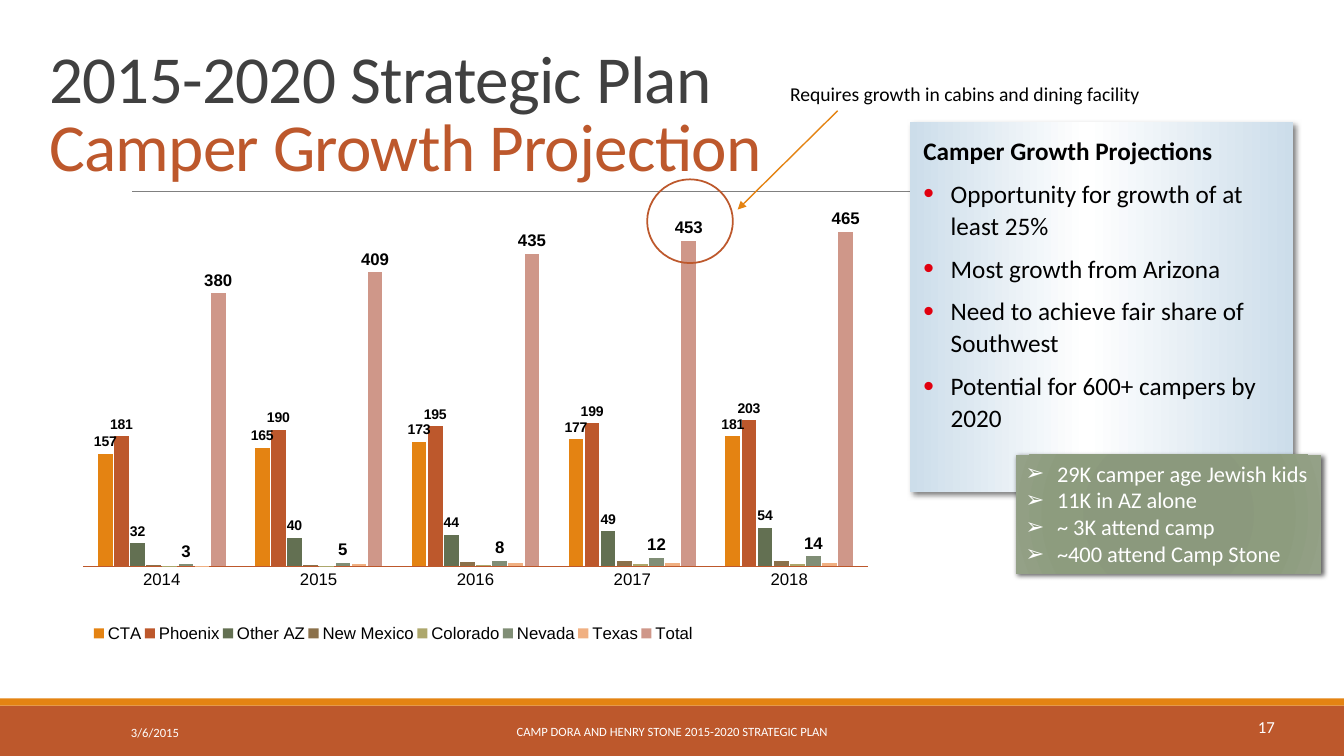
from lxml import etree
from pptx import Presentation
from pptx.chart.data import CategoryChartData
from pptx.dml.color import RGBColor
from pptx.enum import chart as ch, shapes, text
from pptx.oxml import parse_xml
from pptx.oxml.ns import nsdecls, qn
from pptx.util import Cm, Pt

RUST = RGBColor(0xBD, 0x58, 0x2C)
ORANGE = RGBColor(0xE4, 0x83, 0x12)
DARK = RGBColor(0x40, 0x40, 0x40)
GRAY = RGBColor(0x80, 0x80, 0x80)
BLACK = RGBColor(0, 0, 0)
WHITE = RGBColor(0xFF, 0xFF, 0xFF)
RED = RGBColor(0xE1, 0x00, 0x0F)
GREEN = RGBColor(0x63, 0x70, 0x52)
BROWN = RGBColor(0x8B, 0x71, 0x4B)
KHAKI = RGBColor(0xAD, 0xA7, 0x6C)
SAGE = RGBColor(0x80, 0x8E, 0x76)
PEACH = RGBColor(0xF0, 0xB0, 0x82)
ROSE = RGBColor(0xCF, 0x97, 0x89)


def write(sp, *lines, size, color, bullet=None, bullet_color=None, indent=0, bold_first=False,
          spacing=None, after=None, align=text.PP_ALIGN.LEFT, anchor=text.MSO_ANCHOR.TOP, wrap=True):
    """Put one paragraph per line into the shape; a bold first line gets no bullet."""
    tf = sp.text_frame
    tf.word_wrap = wrap
    tf.vertical_anchor = anchor
    for i, line in enumerate(lines):
        p = tf.paragraphs[0] if i == 0 else tf.add_paragraph()
        p.alignment, p.line_spacing, p.space_after = align, spacing, after
        r = p.add_run()
        r.text = line
        r.font.name, r.font.size, r.font.color.rgb = "Calibri", Pt(size), color
        r.font.bold = bold_first and i == 0
        if bullet and not r.font.bold:
            pPr = p._p.get_or_add_pPr()
            pPr.set("marL", str(indent))
            pPr.set("indent", str(-indent))
            if bullet_color is not None:
                clr = etree.SubElement(pPr, qn("a:buClr"))
                etree.SubElement(clr, qn("a:srgbClr"), val=str(bullet_color))
                etree.SubElement(pPr, qn("a:buSzPct"), val="120000")
            etree.SubElement(pPr, qn("a:buFont"), typeface="Arial")
            etree.SubElement(pPr, qn("a:buChar"), char=bullet)
    return tf


def gradient_panel(box, stops, direction, blur, dist, alpha):
    """Add a borderless rectangle with a gradient fill and a drop shadow."""
    sp = slide.shapes.add_shape(shapes.MSO_SHAPE.RECTANGLE, *map(Cm, box))
    sp.line.fill.background()
    sp.shadow.inherit = False
    gs = "".join(f'<a:gs pos="{pos * 1000}"><a:srgbClr val="{c}"/></a:gs>' for pos, c in stops)
    spPr = sp._element.spPr
    spPr.find(qn("a:prstGeom")).addnext(parse_xml(
        f'<a:gradFill {nsdecls("a")} rotWithShape="1"><a:gsLst>{gs}</a:gsLst>{direction}</a:gradFill>'))
    spPr.find(qn("a:effectLst")).append(parse_xml(
        f'<a:outerShdw {nsdecls("a")} blurRad="{Pt(blur)}" dist="{Pt(dist)}" dir="2700000" algn="tl" '
        f'rotWithShape="0"><a:srgbClr val="000000"><a:alpha val="{alpha * 1000}"/></a:srgbClr></a:outerShdw>'))
    return sp


prs = Presentation()
prs.slide_width, prs.slide_height = Cm(33.87), Cm(19.05)
slide = prs.slides.add_slide(prs.slide_layouts[6])

# Footer bands
for top, height, color in ((17.78, 1.27, RUST), (17.6, 0.18, ORANGE)):
    band = slide.shapes.add_shape(shapes.MSO_SHAPE.RECTANGLE, 0, Cm(top), prs.slide_width, Cm(height))
    band.fill.solid()
    band.fill.fore_color.rgb = color
    band.line.fill.background()
    band.shadow.inherit = False

# Title and its rule
rule = slide.shapes.add_connector(shapes.MSO_CONNECTOR.STRAIGHT, Cm(3.33), Cm(4.83), Cm(31.01), Cm(4.83))
rule.line.color.rgb, rule.line.width = GRAY, Pt(0.5)
etree.SubElement(rule._element.spPr, qn("a:effectLst"))
title = slide.shapes.add_textbox(Cm(0.99), Cm(0.76), Cm(27.94), Cm(4.04))
tf = write(title, "2015-2020 Strategic Plan", "Camper Growth Projection", size=48, color=DARK,
           spacing=0.85, anchor=text.MSO_ANCHOR.BOTTOM)
tf.paragraphs[1].runs[0].font.color.rgb = RUST
for p in tf.paragraphs:
    p.runs[0]._r.get_or_add_rPr().set("spc", "-50")

# Camper chart: name, values, colour, label size
series = (
    ("CTA", (157, 165, 173, 177, 181), ORANGE, 10),
    ("Phoenix", (181, 190, 195, 199, 203), RUST, 10),
    ("Other AZ", (32, 40, 44, 49, 54), GREEN, 10),
    ("New Mexico", (2, 2, 6, 7, 7), BROWN, None),
    ("Colorado", (1, 1, 2, 3, 3), KHAKI, None),
    ("Nevada", (3, 5, 8, 12, 14), SAGE, 12),
    ("Texas", (1, 4, 5, 5, 5), PEACH, None),
    ("Total", (380, 409, 435, 453, 465), ROSE, 12),
)
data = CategoryChartData(number_format="0")
data.categories = ["2014", "2015", "2016", "2017", "2018"]
for name, values, color, label_size in series:
    data.add_series(name, values)
chart = slide.shapes.add_chart(ch.XL_CHART_TYPE.COLUMN_CLUSTERED, Cm(2.08), Cm(4.93),
                               Cm(20.09), Cm(11.86), data).chart
chart.has_title = False
chart.font.name, chart.font.size, chart.font.color.rgb = "Arial", Pt(12), BLACK
chart.has_legend = True
chart.legend.position = ch.XL_LEGEND_POSITION.BOTTOM
chart.legend.include_in_layout = False
chart.value_axis.visible = False
chart.value_axis.has_major_gridlines = False
chart.value_axis.minimum_scale, chart.value_axis.maximum_scale = 0, 500
axis = chart.category_axis
axis.major_tick_mark = ch.XL_TICK_MARK.NONE
axis.format.line.color.rgb, axis.format.line.width = RUST, Pt(0.75)
plot = chart.plots[0]
plot.gap_width, plot.overlap, plot.vary_by_categories = 200, -10, False
for ser, (name, values, color, label_size) in zip(plot.series, series):
    ser.format.fill.solid()
    ser.format.fill.fore_color.rgb = color
    if label_size:
        labels = ser.data_labels
        labels.show_value = True
        labels.number_format, labels.number_format_is_linked = "0", False
        labels.position = ch.XL_LABEL_POSITION.OUTSIDE_END
        labels.font.name, labels.font.size, labels.font.bold = "Arial", Pt(label_size), True
        labels.font.color.rgb = BLACK

plot_area = chart._chartSpace.chart.plotArea
legend = chart.legend._element
for parent, inner, place in ((plot_area, True, (0.001, 0.024, 0.984, 0.764)),
                             (legend, False, (0.01, 0.9, 0.76, 0.06))):
    for old in parent.findall(qn("c:layout")):
        parent.remove(old)
    target = '<c:layoutTarget val="inner"/>' if inner else ""
    modes = '<c:xMode val="edge"/><c:yMode val="edge"/>'
    sizes = "".join(f'<c:{k} val="{v}"/>' for k, v in zip("xywh", place))
    layout = parse_xml(f'<c:layout {nsdecls("c")}><c:manualLayout>{target}{modes}{sizes}</c:manualLayout></c:layout>')
    parent.insert(0 if inner else 1, layout)

# Projections panel
panel = gradient_panel((22.94, 3.07, 9.65, 9.32), ((0, "CCDDEA"), (46, "FFFFFF"), (100, "CCDDEA")),
                       '<a:lin ang="0" scaled="0"/>', blur=4, dist=3, alpha=50)
tf = write(panel, "Camper Growth Projections", "Opportunity for growth of at least 25%",
           "Most growth from Arizona", "Need to achieve fair share of Southwest",
           "Potential for 600+ campers by 2020", size=18, color=BLACK, bullet="•", bullet_color=RED,
           indent=Cm(0.69), bold_first=True, spacing=1.05, after=Pt(8))
tf.margin_left = tf.margin_right = Cm(0.33)
tf.margin_top, tf.margin_bottom = Cm(0.3), Cm(0.18)

# Footer texts
date = slide.shapes.add_textbox(Cm(3.05), Cm(17.93), Cm(6.86), Cm(1.02))
write(date, "3/6/2015", size=9, color=WHITE, spacing=1.05, anchor=text.MSO_ANCHOR.MIDDLE)
footer = slide.shapes.add_textbox(Cm(10.24), Cm(17.93), Cm(13.39), Cm(1.02))
write(footer, "CAMP DORA AND HENRY STONE 2015-2020 STRATEGIC PLAN", size=9, color=WHITE,
      align=text.PP_ALIGN.CENTER, anchor=text.MSO_ANCHOR.MIDDLE)
number = slide.shapes.add_textbox(Cm(31.45), Cm(17.93), Cm(0.94), Cm(0.76))
write(number, "17", size=12, color=WHITE, wrap=False)

# Market facts
facts = gradient_panel((25.6, 11.46, 7.7, 3), ((0, "8A987B"), (34, "8B997D"), (70, "8D9C7E"), (100, "94A187")),
                       '<a:path path="circle"><a:fillToRect l="100000" t="100000" r="100000" b="100000"/></a:path>',
                       blur=3.5, dist=2, alpha=60)
write(facts, "29K camper age Jewish kids", "11K in AZ alone", "~ 3K attend camp", "~400 attend Camp Stone",
      size=16, color=WHITE, bullet="➢", indent=Cm(0.79), wrap=False)

# Callout on the 2017 total
ring = slide.shapes.add_shape(shapes.MSO_SHAPE.OVAL, Cm(16.31), Cm(4.52), Cm(2.16), Cm(2.11))
ring.fill.background()
ring.line.color.rgb, ring.line.width = RUST, Pt(1.25)
ring.shadow.inherit = False
arrow = slide.shapes.add_connector(shapes.MSO_CONNECTOR.STRAIGHT, Cm(21.11), Cm(2.79), Cm(18.59), Cm(5.28))
arrow.line.color.rgb, arrow.line.width = ORANGE, Pt(1)
etree.SubElement(arrow.line._get_or_add_ln(), qn("a:tailEnd"), type="triangle")
etree.SubElement(arrow._element.spPr, qn("a:effectLst"))
note = slide.shapes.add_textbox(Cm(19.66), Cm(1.93), Cm(9.42), Cm(0.86))
write(note, "Requires growth in cabins and dining facility", size=14, color=BLACK, wrap=False)

prs.save("out.pptx")
